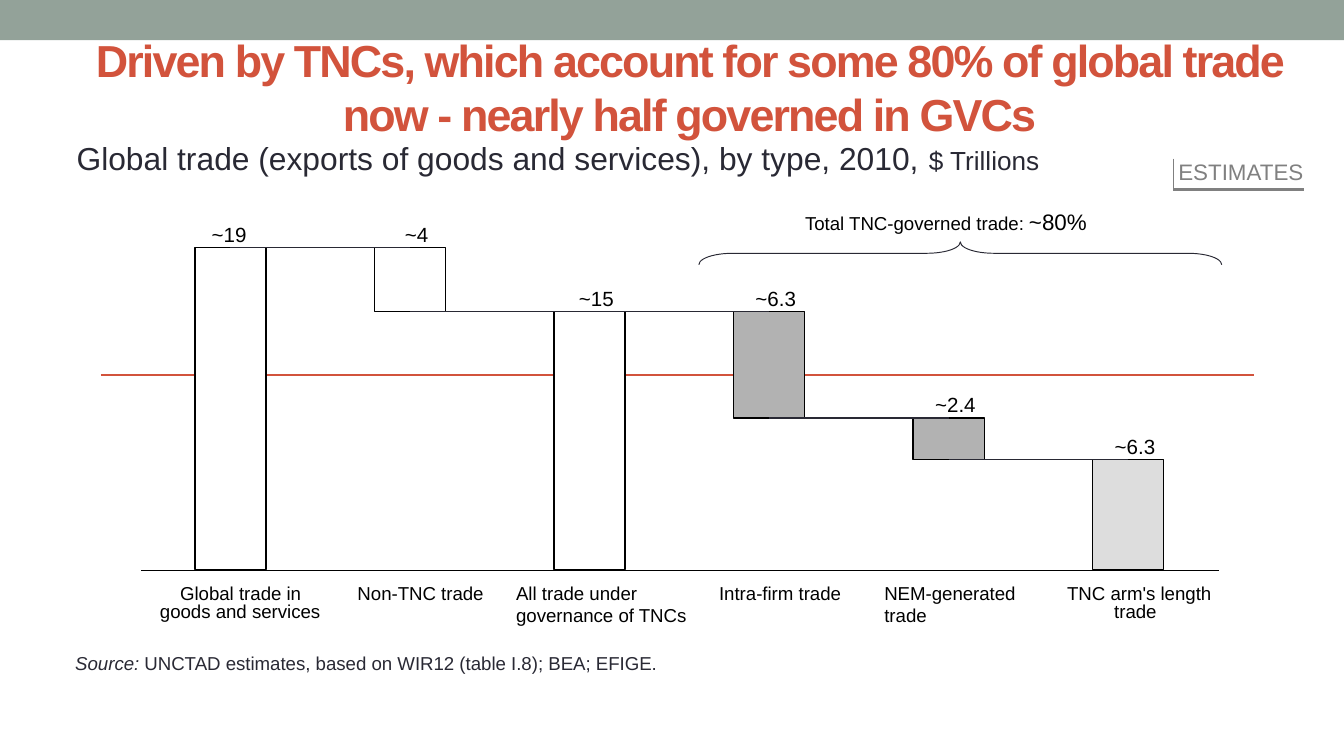
"""Build a waterfall slide of global trade by type."""
from lxml import etree
from pptx import Presentation
from pptx import util as u
from pptx.dml import color
from pptx.enum import shapes, text
from pptx.oxml import ns

INK, BLACK, GREY, ACCENT = "292934", "000000", "808080", "D2533C"
TOP, LEFT, BOTTOM, RIGHT = range(4)
ALIGN = text.PP_ALIGN
ANCHOR = text.MSO_ANCHOR
KIND = shapes.MSO_SHAPE


def rgb(value):
    return color.RGBColor.from_string(value)


def write(paragraph, content, size=10, ink=BLACK, bold=False, italic=False, spacing=None):
    run = paragraph.add_run()
    run.text = content
    font = run.font
    font.name, font.size = "Arial", u.Pt(size)
    font.bold, font.italic = bold, italic
    font.color.rgb = rgb(ink)
    if spacing is not None:
        run._r.get_or_add_rPr().set("spc", str(spacing * 100))


class Slide:
    def __init__(self, deck):
        self.page = deck.slides.add_slide(deck.slide_layouts[5])
        self.shapes = self.page.shapes

    def frame(self, holder, wrap, anchor, align):
        body = holder.text_frame
        body.margin_left = body.margin_right = body.margin_top = body.margin_bottom = 0
        body.word_wrap = wrap
        body.auto_size = text.MSO_AUTO_SIZE.NONE
        body.vertical_anchor = anchor
        body.paragraphs[0].alignment = align
        return body

    def title(self, content, left, top, width, height):
        heading = self.shapes.title
        heading.left, heading.top = u.Inches(left), u.Inches(top)
        heading.width, heading.height = u.Inches(width), u.Inches(height)
        body = self.frame(heading, True, ANCHOR.MIDDLE, ALIGN.CENTER)
        write(body.paragraphs[0], content, size=24, ink=ACCENT, bold=True, spacing=-1)

    def label(self, lines, left, top, width, height=0.17, wrap=False, align=ALIGN.LEFT):
        box = self.shapes.add_textbox(*map(u.Inches, (left, top, width, height)))
        body = self.frame(box, wrap, ANCHOR.TOP, align)
        for index, runs in enumerate(lines):
            paragraph = body.add_paragraph() if index else body.paragraphs[0]
            for content, style in runs:
                write(paragraph, content, **style)

    def sticker(self, content, left, top, width, height):
        tag = self.shape(KIND.LEFT_RIGHT_ARROW, left, top, width, height)
        tag.adjustments[0], tag.adjustments[1] = 1, 0
        body = self.frame(tag, False, ANCHOR.MIDDLE, ALIGN.RIGHT)
        body.margin_left = body.margin_bottom = u.Inches(0.03)
        write(body.paragraphs[0], content, size=12, ink=GREY)
        bottom = top + height
        self.line((left, top), (left, bottom), GREY)
        self.line((left, bottom), (left + width, bottom), GREY, 2)

    def shape(self, kind, left, top, width, height, fill=None, line=None, weight=0.75):
        item = self.shapes.add_shape(kind, *map(u.Inches, (left, top, width, height)))
        item.shadow.inherit = False
        if fill:
            item.fill.solid()
            item.fill.fore_color.rgb = rgb(fill)
        else:
            item.fill.background()
        if line:
            item.line.color.rgb = rgb(line)
            item.line.width = u.Pt(weight)
        else:
            item.line.fill.background()
        return item

    def line(self, start=(0, 0), end=(0, 0), ink=INK, weight=0.75, joins=None):
        rule = self.shapes.add_connector(
            shapes.MSO_CONNECTOR.STRAIGHT, *map(u.Inches, (*start, *end)))
        rule.line.color.rgb = rgb(ink)
        rule.line.width = u.Pt(weight)
        etree.SubElement(rule._element.spPr, ns.qn("a:effectLst"))
        if joins:
            (first, exit_side), (second, entry_side) = joins
            rule.begin_connect(first, exit_side)
            rule.end_connect(second, entry_side)


def add_waterfall(slide):
    bar_width, first_left, pitch = 0.53, 1.45, 6.68 / 5
    full, tnc, nem, arm, base = 1.84, 2.32, 3.11, 3.42, 4.24
    trades = [
        ("~19", full, base, "FFFFFF", -0.01),
        ("~4", full, tnc, "FFFFFF", 0.05),
        ("~15", tnc, base, "FFFFFF", 0.05),
        ("~6.3", tnc, nem, "B2B2B2", 0.05),
        ("~2.4", nem, arm, "B2B2B2", 0.05),
        ("~6.3", arm, base, "DDDDDD", 0.05),
    ]
    bars = []
    for index, (amount, top, bottom, fill, shift) in enumerate(trades):
        left = first_left + index * pitch
        bars.append(slide.shape(KIND.RECTANGLE, left, top, bar_width,
                                bottom - top, fill, BLACK))
        slide.label([[(amount, {"size": 11})]], left + shift, top - 0.19, bar_width,
                    0.19, wrap=True, align=ALIGN.CENTER)
    slide.line((1.05, base), (9.07, base), BLACK, 0.25)
    for index, exit_side in enumerate((TOP, BOTTOM, TOP, BOTTOM, BOTTOM)):
        slide.line(joins=((bars[index], exit_side), (bars[index + 1], TOP)))


def add_categories(slide):
    first_row, second_row = 4.33, 4.46
    for content, left, top, width in [
        ("Global trade in", 1.34, first_row, 0.91),
        ("goods and services", 1.19, second_row, 1.21),
        ("Non-TNC trade", 2.66, first_row, 0.95),
        ("Intra-firm trade", 5.35, first_row, 0.92),
        ("TNC arm's length", 7.94, first_row, 1.09),
        ("trade", 8.29, second_row, 0.32),
    ]:
        slide.label([[(content, {})]], left, top, width)
    slide.label([[("All trade under", {})], [("governance of TNCs", {})]],
                3.84, first_row, 1.28, 0.34)
    slide.label([[("NEM-generated trade", {})]], 6.58, first_row, 1, 0.34, wrap=True)


def main():
    deck = Presentation()
    deck.slide_width, deck.slide_height = u.Inches(10), u.Inches(10 * 9 / 16)
    slide = Slide(deck)
    slide.shape(KIND.RECTANGLE, 0, 0, 10, 0.3, "93A299")
    slide.line((0.75, 2.79), (9.33, 2.79), ACCENT, 1.5)
    slide.title("Driven by TNCs, which account for some 80% of global trade now"
                " - nearly half governed in GVCs", 0.57, 0.24, 9.12, 0.81)
    slide.label([[("Global trade (exports of goods and services), by type, 2010, ",
                   {"size": 17, "ink": INK}),
                  ("$ Trillions", {"size": 14, "ink": INK})]],
                0.57, 1.03, 8.3, 0.29, wrap=True)
    slide.sticker("ESTIMATES", 8.73, 1.18, 0.97, 0.23)

    add_waterfall(slide)
    add_categories(slide)

    slide.label([[("Total TNC-governed trade: ", {}), ("~80%", {"size": 12})]],
                5.99, 1.55, 2.12, 0.2)
    brace = slide.shape(KIND.LEFT_BRACE, 7.06, -0.06, 0.17, 3.89,
                        line=INK, weight=0.5)
    brace.rotation = 90
    brace.adjustments[0] = 1.47
    slide.label([[("Source:", {"ink": INK, "italic": True}),
                  (" UNCTAD estimates, based on WIR12 (table I.8); BEA; EFIGE.",
                   {"ink": INK})]], 0.56, 4.85, 4.39)
    deck.save("out.pptx")


if __name__ == "__main__":
    main()
